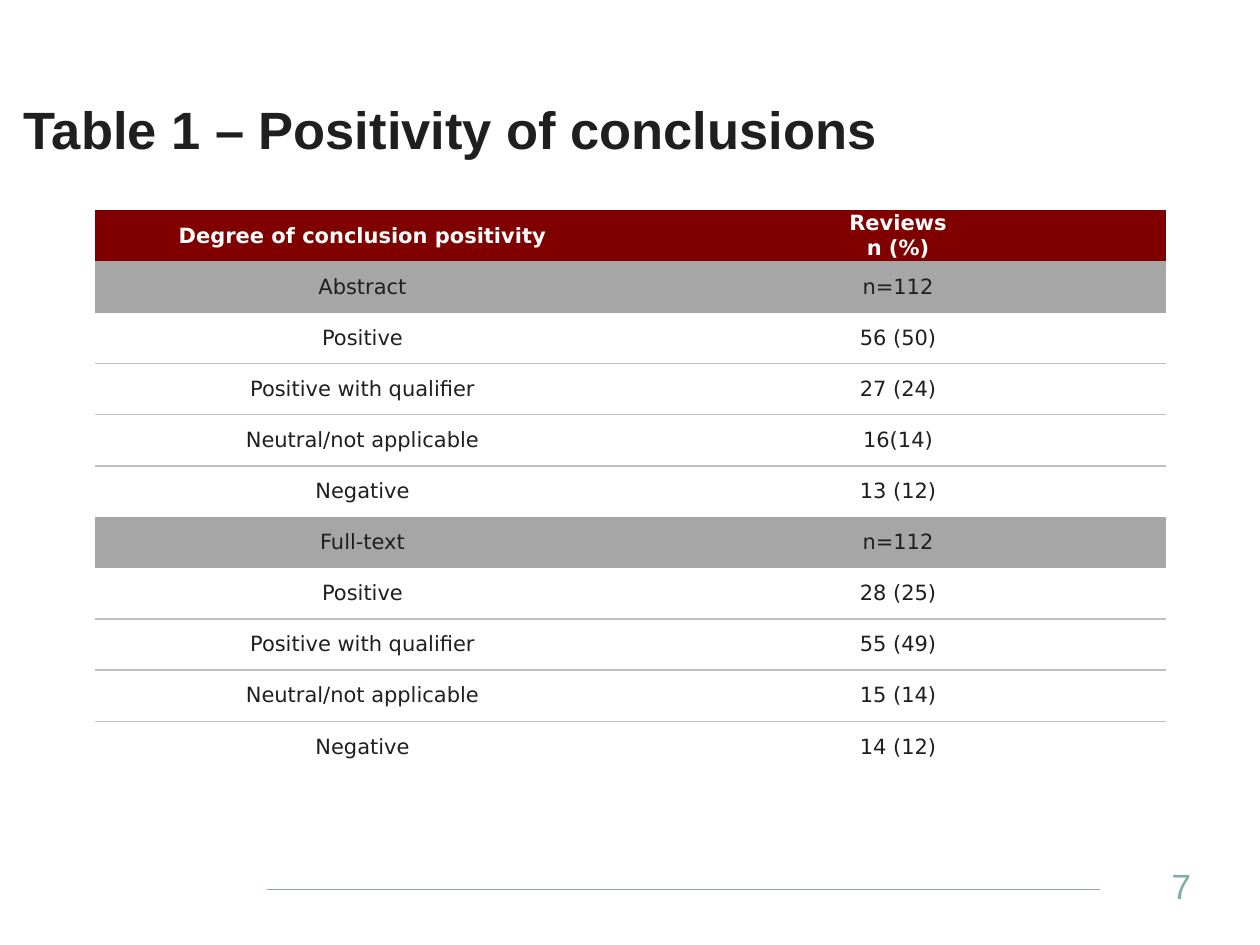
from dataclasses import dataclass

from lxml.etree import SubElement
from pptx import Presentation
from pptx.dml.color import RGBColor as RGB
from pptx.enum.shapes import MSO_CONNECTOR as Conn
from pptx.enum.text import MSO_ANCHOR as Anchor, PP_ALIGN as Align
from pptx.oxml import parse_xml
from pptx.oxml.ns import nsdecls, qn
from pptx.util import Cm, Pt


@dataclass(frozen=True)
class Theme:
    ink: str = "1F1F1F"
    white: str = "FFFFFF"
    header: str = "800000"
    band: str = "A6A6A6"
    rule: str = "BFBFBF"
    accent: str = "81ADA8"
    font: str = "Arial"
    table_font: str = "DejaVu Sans"
    title_size: int = 30
    number_size: int = 20
    table_size: int = 12


T = Theme()

HEADER = ("Degree of conclusion positivity", "Reviews\nn (%)")
DEGREES = ("Positive", "Positive with qualifier", "Neutral/not applicable", "Negative")
SECTIONS = (
    ("Abstract", "n=112", ("56 (50)", "27 (24)", "16(14)", "13 (12)")),
    ("Full-text", "n=112", ("28 (25)", "55 (49)", "15 (14)", "14 (12)")),
)


def write(tf, text, size, color=T.ink, font=T.font, bold=False,
          align=Align.LEFT):
    """Fill a text frame, one paragraph for each line of text."""
    tf.word_wrap = True
    for i, line in enumerate(text.split("\n")):
        p = tf.add_paragraph() if i else tf.paragraphs[0]
        p.alignment = align
        r = p.add_run()
        r.text = line
        r.font.size, r.font.name, r.font.bold = Pt(size), font, bold
        r.font.color.rgb = RGB.from_string(color)


def set_borders(cell, top, bottom):
    """Draw the wanted horizontal borders and clear the others."""
    tcPr = cell._tc.get_or_add_tcPr()
    sides = (("L", False), ("R", False), ("T", top), ("B", bottom))
    for i, (side, shown) in enumerate(sides):
        ln = parse_xml(f'<a:ln{side} {nsdecls("a")} w="{Pt(1)}"/>')
        if shown:
            fill = SubElement(ln, qn("a:solidFill"))
            SubElement(fill, qn("a:srgbClr"), val=T.rule)
        else:
            SubElement(ln, qn("a:noFill"))
        tcPr.insert(i, ln)


def add_title(s, text, x, y, w, h):
    sp = s.shapes.add_textbox(Cm(x), Cm(y), Cm(w), Cm(h))
    write(sp.text_frame, text, T.title_size, bold=True)


def add_results(s, x, y, w, h):
    # Rows: header, then each section band with its degrees
    rows = [("header", HEADER)]
    for name, total, counts in SECTIONS:
        rows.append(("band", (name, total)))
        rows += [("body", pair) for pair in zip(DEGREES, counts)]
    kinds = [kind for kind, _ in rows] + ["end"]
    fills = {"header": T.header, "band": T.band}

    table = s.shapes.add_table(len(rows), 2, Cm(x), Cm(y), Cm(w), Cm(h)).table
    table.first_row = table.horz_banding = False
    for i, (kind, texts) in enumerate(rows):
        head = kind == "header"
        for j, text in enumerate(texts):
            cell = table.cell(i, j)
            cell.vertical_anchor = Anchor.MIDDLE
            cell.margin_left = cell.margin_right = Cm(0.18)
            cell.margin_top = cell.margin_bottom = 0
            write(cell.text_frame, text, T.table_size, font=T.table_font,
                  color=T.white if head else T.ink, bold=head,
                  align=Align.CENTER)
            if kind in fills:
                cell.fill.solid()
                cell.fill.fore_color.rgb = RGB.from_string(fills[kind])
            else:
                cell.fill.background()
            # Rules run only between two body rows
            set_borders(cell, top=kind == kinds[i - 1] == "body",
                        bottom=kind == kinds[i + 1] == "body")


def add_footer(s, number, x, y, w, h):
    # Rule
    line_y = Cm(y + 0.58)
    line = s.shapes.add_connector(Conn.STRAIGHT, Cm(x), line_y,
                                  Cm(x + 16.78), line_y)
    line.line.color.rgb = RGB.from_string(T.accent)
    line.line.width = Pt(0.5)
    SubElement(line._element.spPr, qn("a:effectLst"))
    # Slide number
    box_w = 2.03
    sp = s.shapes.add_textbox(Cm(x + w - box_w), Cm(y), Cm(box_w), Cm(h))
    sp.text_frame.vertical_anchor = Anchor.MIDDLE
    write(sp.text_frame, number, T.number_size, color=T.accent)


def main():
    prs = Presentation()
    prs.slide_width, prs.slide_height = Cm(25.4), Cm(19.05)
    s = prs.slides.add_slide(prs.slide_layouts[6])
    add_footer(s, "7", 5.39, 17.35, 20.01, 1.02)
    add_title(s, "Table 1 – Positivity of conclusions", 0.23, 1.83, 20.14, 2.08)
    add_results(s, 1.91, 4.24, 21.59, 11.34)
    prs.save("out.pptx")


if __name__ == "__main__":
    main()
